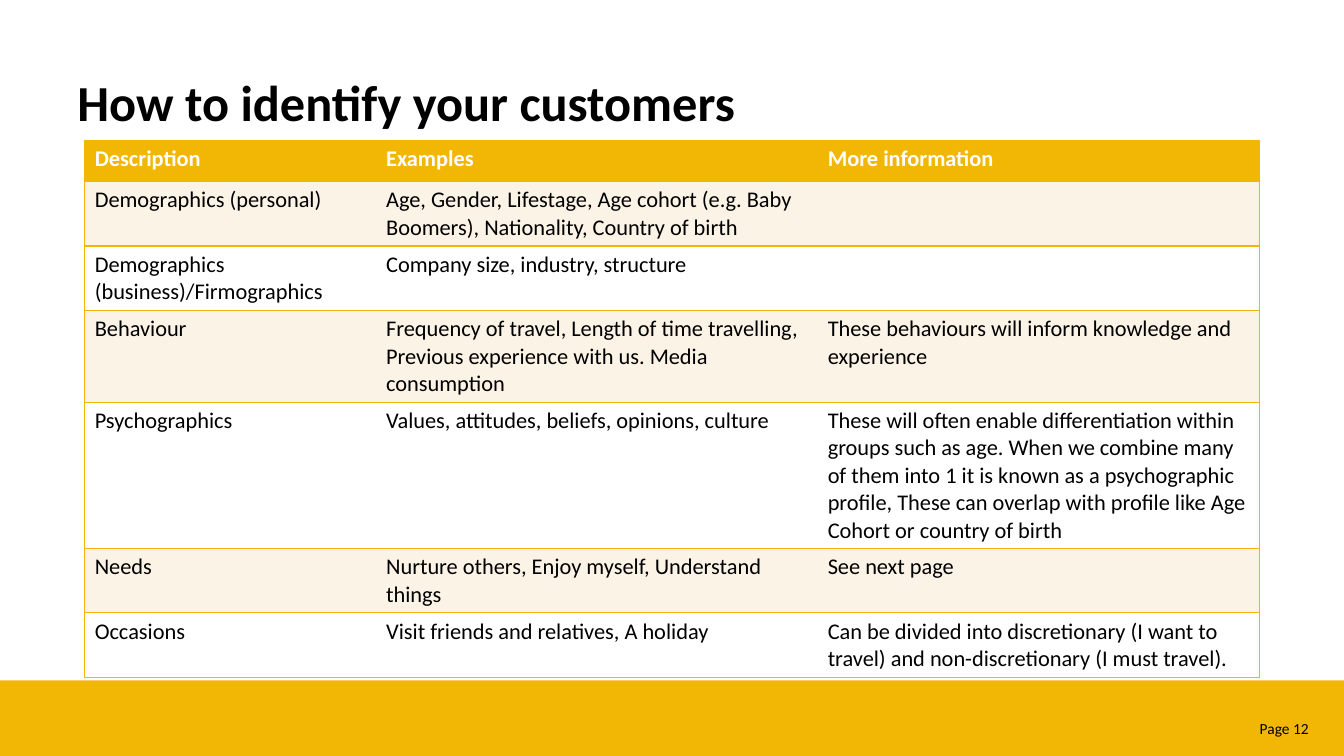
import pptx
import pptx.dml.color
import pptx.enum.shapes
import pptx.enum.text
import pptx.oxml
import pptx.oxml.ns
import pptx.util

Inches = pptx.util.Inches
COLORS = {"gold": "F2B605", "cream": "FCF3E7", "white": "FFFFFF", "black": "000000"}
FONT = "Calibri"
COLUMN_WIDTHS = [2.89, 4.38, 4.38]
HEADER_HEIGHT = 0.41
LINE_HEIGHT = 0.27
CELL_PADDING = 0.1
HEADINGS = ["Description", "Examples", "More information"]

# Number of text lines, then the cells of each row
CUSTOMER_ROWS = [
    (2, ["Demographics (personal)",
         "Age, Gender, Lifestage, Age cohort (e.g. Baby Boomers), Nationality, Country of birth",
         ""]),
    (2, ["Demographics (business)/Firmographics", "Company size, industry, structure", ""]),
    (3, ["Behaviour",
         "Frequency of travel, Length of time travelling, Previous experience with us. "
         "Media consumption",
         "These behaviours will inform knowledge and experience"]),
    (5, ["Psychographics", "Values, attitudes, beliefs, opinions, culture",
         "These will often enable differentiation within groups such as age. When we combine "
         "many of them into 1 it is known as a psychographic profile, These can overlap with "
         "profile like Age Cohort or country of birth"]),
    (2, ["Needs", "Nurture others, Enjoy myself, Understand things", "See next page"]),
    (2, ["Occasions", "Visit friends and relatives, A holiday",
         "Can be divided into discretionary (I want to travel) and non-discretionary "
         "(I must travel)."]),
]


def color(name):
    return pptx.dml.color.RGBColor.from_string(COLORS[name])


def style_paragraph(paragraph, size, color_name, bold=False):
    paragraph.font.name = FONT
    paragraph.font.size = pptx.util.Pt(size)
    paragraph.font.bold = bold
    paragraph.font.color.rgb = color(color_name)


def add_text(slide, text, left, top, width, height, size, bold=False):
    frame = slide.shapes.add_textbox(
        Inches(left), Inches(top), Inches(width), Inches(height)).text_frame
    frame.word_wrap = True
    frame.text = text
    style_paragraph(frame.paragraphs[0], size, "black", bold)
    return frame


def add_title(slide, left, top, width, height):
    frame = add_text(slide, "How to identify your customers", left, top, width, height, 36, True)
    frame.vertical_anchor = pptx.enum.text.MSO_ANCHOR.BOTTOM


def add_footer(slide, left, top, width, height):
    band = slide.shapes.add_shape(
        pptx.enum.shapes.MSO_SHAPE.RECTANGLE,
        Inches(left), Inches(top), Inches(width), Inches(height))
    band.shadow.inherit = False
    band.fill.solid()
    band.fill.fore_color.rgb = color("gold")
    band.line.fill.background()
    # Page number
    frame = add_text(slide, "Page 12", left + width - 1.44, top + 0.33, 1.22, 0.29, 11)
    frame.margin_right = Inches(0.13)
    frame.paragraphs[0].alignment = pptx.enum.text.PP_ALIGN.RIGHT


def set_borders(cell, is_first, is_last):
    properties = cell._tc.get_or_add_tcPr()
    sides = [("lnL", is_first), ("lnR", is_last), ("lnT", True), ("lnB", True)]
    for position, (side, visible) in enumerate(sides):
        fill = (f'<a:solidFill><a:srgbClr val="{COLORS["gold"]}"/></a:solidFill>'
                if visible else "<a:noFill/>")
        properties.insert(position, pptx.oxml.parse_xml(
            f'<a:{side} {pptx.oxml.ns.nsdecls("a")} w="12700">{fill}</a:{side}>'))


def add_customer_table(slide, left, top):
    rows = [HEADINGS] + [texts for _, texts in CUSTOMER_ROWS]
    heights = [HEADER_HEIGHT] + [
        lines * LINE_HEIGHT + CELL_PADDING for lines, _ in CUSTOMER_ROWS]
    table = slide.shapes.add_table(
        len(rows), len(COLUMN_WIDTHS), Inches(left), Inches(top),
        Inches(sum(COLUMN_WIDTHS)), Inches(sum(heights))).table
    for column, width in zip(table.columns, COLUMN_WIDTHS):
        column.width = Inches(width)
    for row_index, (texts, height) in enumerate(zip(rows, heights)):
        table.rows[row_index].height = Inches(height)
        is_header = row_index == 0
        fill_name = "gold" if is_header else ("cream" if row_index % 2 else "white")
        for column_index, text in enumerate(texts):
            cell = table.cell(row_index, column_index)
            cell.text = text
            style_paragraph(cell.text_frame.paragraphs[0], 16,
                            "white" if is_header else "black", is_header)
            cell.fill.solid()
            cell.fill.fore_color.rgb = color(fill_name)
            set_borders(cell, column_index == 0, column_index == len(texts) - 1)


def main():
    presentation = pptx.Presentation()
    presentation.slide_width = Inches(13.33)
    presentation.slide_height = Inches(7.5)
    slide = presentation.slides.add_slide(presentation.slide_layouts[6])
    add_footer(slide, 0, 6.75, 13.33, 0.75)
    add_title(slide, 0.67, 0.3, 12, 1.05)
    add_customer_table(slide, 0.84, 1.39)
    presentation.save("out.pptx")


if __name__ == "__main__":
    main()
